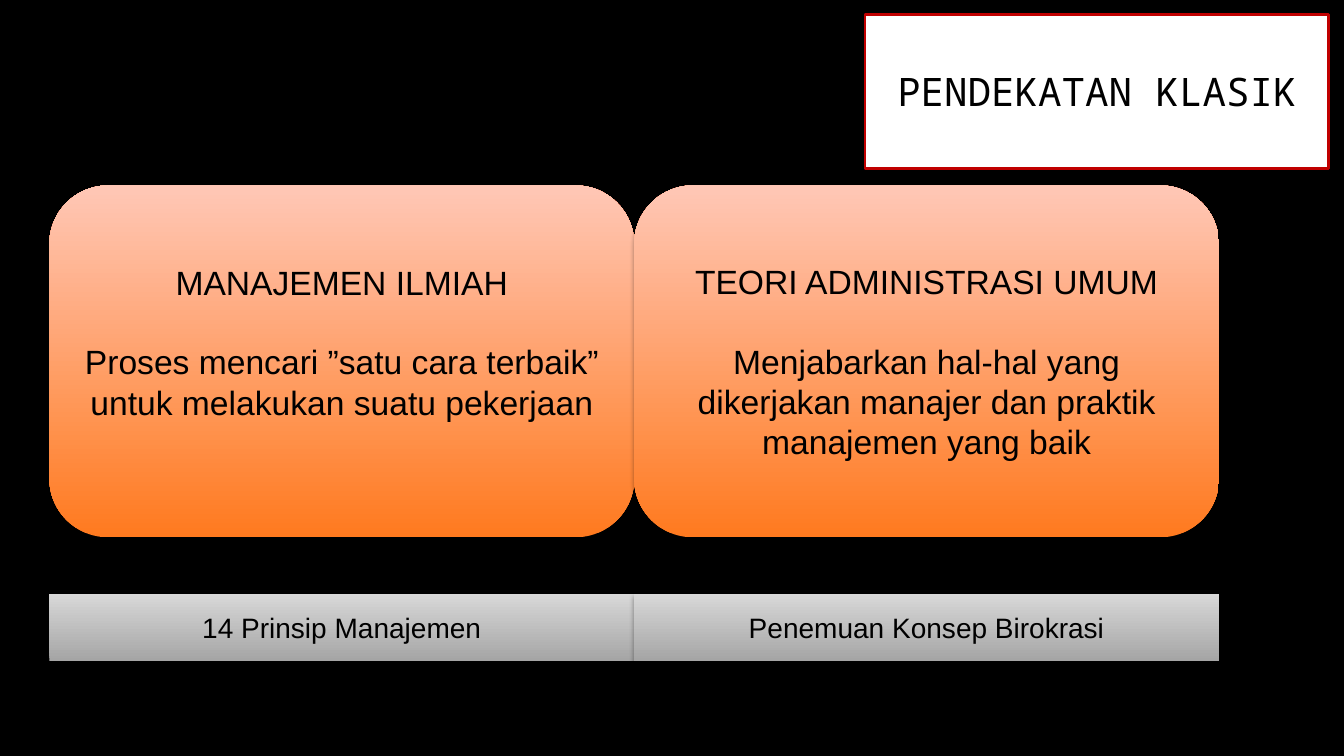
from dataclasses import dataclass

from lxml.etree import SubElement
from pptx import Presentation
from pptx.dml.color import RGBColor
from pptx.enum.shapes import MSO_SHAPE as Shape
from pptx.enum.text import MSO_ANCHOR as Anchor, PP_ALIGN as Align
from pptx.oxml.ns import qn
from pptx.util import Emu, Inches, Pt

LEFT, COL_W = 0.49, 5.8
ORANGE = ("FF7A1F", "FFC7B6")
GREY = ("A5A5A5", "D8D8D8")


@dataclass(frozen=True)
class Row:
    top: float
    height: float
    geometry: Shape
    gradient: tuple[str, str]
    size: int


@dataclass(frozen=True)
class Panel:
    row: Row
    col: int
    lines: tuple[str, ...]
    bottom: float = 0.05


CARDS = Row(1.84, 3.49, Shape.ROUNDED_RECTANGLE, ORANGE, 24)
BARS = Row(5.89, 0.67, Shape.RECTANGLE, GREY, 20)

PANELS = (
    Panel(CARDS, 0, ("MANAJEMEN ILMIAH",
                     "Proses mencari ”satu cara terbaik” untuk melakukan suatu pekerjaan"), 0.44),
    Panel(CARDS, 1, ("TEORI ADMINISTRASI UMUM",
                     "Menjabarkan hal-hal yang dikerjakan manajer dan praktik manajemen yang baik")),
    Panel(BARS, 0, ("14 Prinsip Manajemen",)),
    Panel(BARS, 1, ("Penemuan Konsep Birokrasi",)),
)


def color(value: str) -> RGBColor:
    return RGBColor.from_string(value)


def place(sp, left: float, top: float, width: float, height: float) -> None:
    sp.left, sp.top = Inches(left), Inches(top)
    sp.width, sp.height = Inches(width), Inches(height)


def write(sp, lines: tuple[str, ...], font: str, size: int) -> None:
    tf = sp.text_frame
    tf.word_wrap = True
    tf.vertical_anchor = Anchor.MIDDLE
    for i, line in enumerate(lines):
        p = tf.add_paragraph() if i else tf.paragraphs[0]
        p.alignment = Align.CENTER
        p.space_before = Pt(28 if i else 0)
        r = p.add_run()
        r.text = line
        r.font.name = font
        r.font.size = Pt(size)
        r.font.color.rgb = color("000000")


def add_shadow(sp) -> None:
    sp.shadow.inherit = False
    effects = sp.element.spPr.find(qn("a:effectLst"))
    outer = SubElement(effects, qn("a:outerShdw"), blurRad=str(Pt(3.1)),
                       dist=str(Pt(1.8)), dir="5400000", rotWithShape="0")
    black = SubElement(outer, qn("a:srgbClr"), val="000000")
    SubElement(black, qn("a:alpha"), val="35000")


def draw_title(s) -> None:
    sp = s.shapes.title
    place(sp, 8.58, 0.14, 4.6, 1.53)
    geometry = SubElement(sp.element.spPr, qn("a:prstGeom"), prst="cloud")
    SubElement(geometry, qn("a:avLst"))
    sp.fill.solid()
    sp.fill.fore_color.rgb = color("FFFFFF")
    sp.line.color.rgb = color("C00000")
    sp.line.width = Pt(2)
    write(sp, ("PENDEKATAN KLASIK",), "Noto Sans Mono", 28)


def draw_panel(s, panel: Panel) -> None:
    row = panel.row
    sp = s.shapes.add_shape(row.geometry, Emu(0), Emu(0), Emu(0), Emu(0))
    place(sp, LEFT + panel.col * COL_W, row.top, COL_W, row.height)
    sp.fill.gradient()
    sp.fill.gradient_angle = 90
    for stop, value in zip(sp.fill.gradient_stops, row.gradient):
        stop.color.rgb = color(value)
    for stop, position in zip(sp.fill.gradient_stops, (0, 1)):
        stop.position = position
    sp.line.fill.background()
    add_shadow(sp)
    sp.text_frame.margin_bottom = Inches(panel.bottom)
    write(sp, panel.lines, "Arial", row.size)


def main() -> None:
    prs = Presentation()
    prs.slide_width, prs.slide_height = Inches(13.33), Inches(7.5)
    s = prs.slides.add_slide(prs.slide_layouts.get_by_name("Title Only"))
    s.background.fill.solid()
    s.background.fill.fore_color.rgb = color("000000")
    draw_title(s)
    for panel in PANELS:
        draw_panel(s, panel)
    prs.save("out.pptx")


if __name__ == "__main__":
    main()
